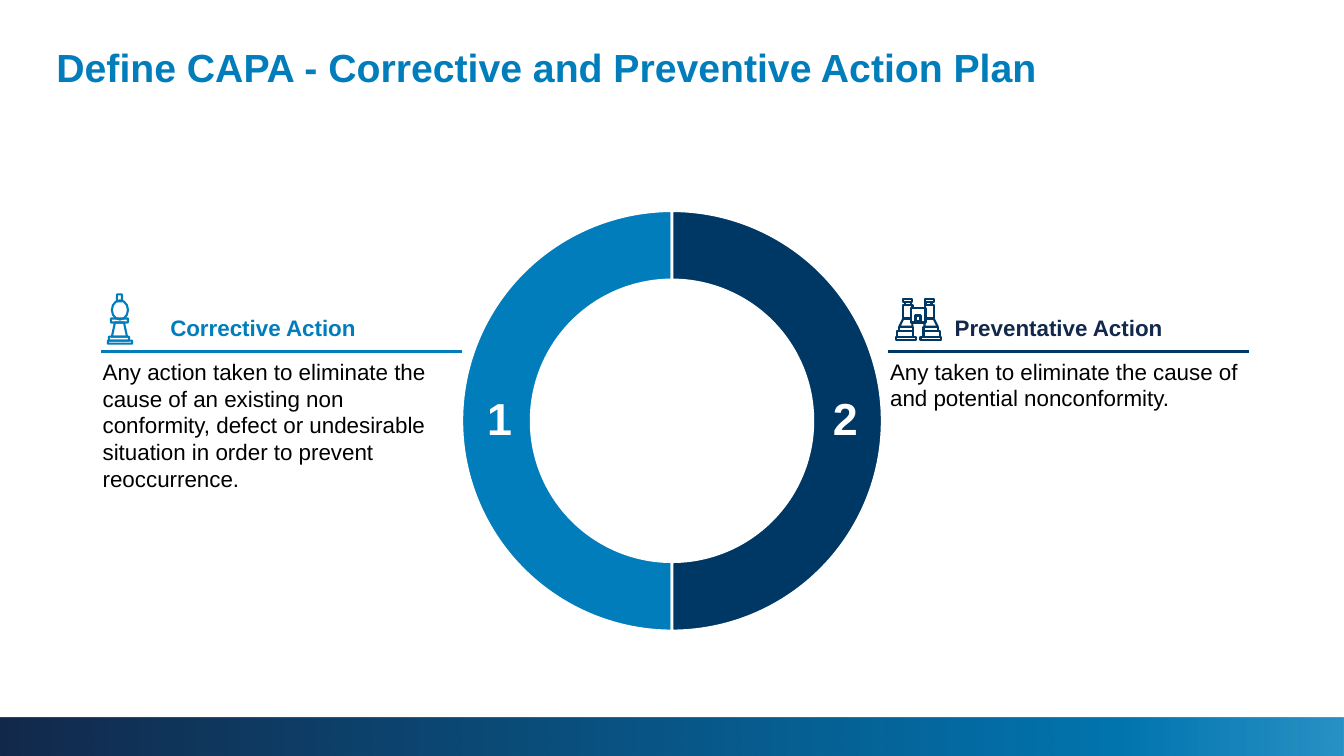
from dataclasses import dataclass

from lxml import etree
from pptx import Presentation, util as u
from pptx.dml.color import RGBColor
from pptx.enum import shapes, text
from pptx.oxml import parse_xml
from pptx.oxml.ns import nsdecls, qn

COLORS = {"blue": "007DBA", "mid": "0275AF", "navy": "003865",
          "ink": "13294B", "white": "FFFFFF", "black": "000000"}
KIND = shapes.MSO_SHAPE
Box = tuple[float, float, float, float]
Points = list[tuple[float, float]]


@dataclass
class Action:
    number: str
    heading: str
    body: str
    color: str
    heading_color: str
    left: float
    heading_left: float
    body_height: float
    number_left: float
    rule: tuple[float, float]
    arc: tuple[float, float]


ACTIONS = [
    Action("1", "Corrective Action",
           "Any action taken to eliminate the cause of an existing non conformity, "
           "defect or undesirable situation in order to prevent reoccurrence.",
           "blue", "blue", 0.92, 1.59, 1.45, 4.83, (4.58, 1), (0, 108)),
    Action("2", "Preventative Action",
           "Any taken to eliminate the cause of and potential nonconformity.",
           "navy", "ink", 8.73, 9.37, 0.64, 8.26, (12.39, 8.81), (108, 0)),
]

BISHOP_OVAL: Box = (1.11, 2.98, 0.16, 0.19)
BISHOP_BARS: list[Box] = [(1.07, 3.38, 0.24, 0.03), (1.08, 3.34, 0.2, 0.04),
                          (1.1, 3.16, 0.17, 0.04), (1.16, 2.92, 0.05, 0.07)]
BISHOP_BODY: Points = [(1.26, 3.34), (1.11, 3.34), (1.14, 3.2), (1.23, 3.2)]

BINOCULAR_AXIS = 9.11
BARREL_BARS: list[Box] = [(8.9, 3.28, 0.16, 0.06), (8.92, 3.24, 0.14, 0.04),
                          (8.98, 3, 0.06, 0.03), (8.96, 2.97, 0.09, 0.03),
                          (8.89, 3.34, 0.2, 0.03)]
BARREL_OUTLINES: list[Points] = [
    [(9.05, 3.19), (9.05, 3.24), (8.92, 3.24), (8.96, 3.16), (9.04, 3.16)],
    [(9.04, 3.16), (8.96, 3.16), (8.96, 3.03), (9.05, 3.03), (9.05, 3.06)],
]
BRIDGE_BARS: list[Box] = [(9.04, 3.06, 0.14, 0.14), (9.08, 3.13, 0.05, 0.06)]


def rgb(name: str) -> RGBColor:
    return RGBColor.from_string(COLORS[name])


def inches(values) -> list[int]:
    return [u.Inches(value) for value in values]


def write_text(shape, wording: str, *, size: float, color: str, bold=False, wrap=True,
               align=text.PP_ALIGN.LEFT, anchor=text.MSO_ANCHOR.TOP,
               inset: float | None = None, spacing: float | None = None,
               fit=text.MSO_AUTO_SIZE.SHAPE_TO_FIT_TEXT) -> None:
    frame = shape.text_frame
    frame.word_wrap = wrap
    frame.auto_size = fit
    frame.vertical_anchor = anchor
    if inset is not None:
        frame.margin_left = frame.margin_right = u.Inches(inset)
        frame.margin_top = frame.margin_bottom = u.Inches(inset)
    paragraph = frame.paragraphs[0]
    paragraph.alignment = align
    if spacing:
        paragraph.line_spacing = spacing
    run = paragraph.add_run()
    run.text = wording
    run.font.name = "Arial"
    run.font.size = u.Pt(size)
    run.font.bold = bold
    run.font.color.rgb = rgb(color)


def style_line(shape, color: str, width: float) -> None:
    shape.line.color.rgb = rgb(color)
    shape.line.width = u.Pt(width)


def add_stroke(parent, kind, box: Box, color: str) -> None:
    """Draw an unfilled preset shape of an icon."""
    shape = parent.shapes.add_shape(kind, *inches(box))
    shape.shadow.inherit = False
    shape.fill.background()
    style_line(shape, color, 1.5)


def add_outline(parent, points: Points, color: str, close: bool) -> None:
    start, *rest = [inches(point) for point in points]
    builder = parent.shapes.build_freeform(*start)
    builder.add_line_segments(rest, close=close)
    shape = builder.convert_to_shape()
    shape.shadow.inherit = False
    shape.fill.background()
    style_line(shape, color, 1.5)


def add_bishop(slide, color: str) -> None:
    group = slide.shapes.add_group_shape()
    add_stroke(group, KIND.OVAL, BISHOP_OVAL, color)
    for box in BISHOP_BARS:
        add_stroke(group, KIND.ROUNDED_RECTANGLE, box, color)
    add_outline(group, BISHOP_BODY, color, close=True)


def add_binoculars(slide, color: str) -> None:
    group = slide.shapes.add_group_shape()
    for left, top, width, height in BARREL_BARS:
        mirrored = 2 * BINOCULAR_AXIS - left - width
        for x in (left, mirrored):
            add_stroke(group, KIND.RECTANGLE, (x, top, width, height), color)
    for points in BARREL_OUTLINES:
        add_outline(group, points, color, close=False)
        mirrored_points = [(2 * BINOCULAR_AXIS - x, y) for x, y in points]
        add_outline(group, mirrored_points, color, close=False)
    for box in BRIDGE_BARS:
        add_stroke(group, KIND.RECTANGLE, box, color)


def add_footer_band(slide) -> None:
    band = slide.shapes.add_shape(KIND.RECTANGLE, *inches((0, 7.12, 13.33, 0.38)))
    band.shadow.inherit = False
    band.line.fill.background()
    band.fill.gradient()
    band.fill.gradient_angle = 0
    stop_list = band.fill._xPr.find(qn("a:gradFill")).find(qn("a:gsLst"))
    for stop in list(stop_list):
        stop_list.remove(stop)
    for position, color, opacity in ((0, "ink", 100), (83, "mid", 100), (100, "blue", 84)):
        stop_list.append(parse_xml(
            f'<a:gs {nsdecls("a")} pos="{position * 1000}"><a:srgbClr val="{COLORS[color]}">'
            f'<a:alpha val="{opacity * 1000}"/></a:srgbClr></a:gs>'))


def add_ring(slide) -> None:
    group = slide.shapes.add_group_shape()
    for action in ACTIONS:
        half = group.shapes.add_shape(KIND.BLOCK_ARC, *inches((4.58, 2.09, 4.17, 4.17)))
        half.shadow.inherit = False
        half.rotation = 90
        for index, value in enumerate((*action.arc, 0.165)):
            half.adjustments[index] = value
        half.fill.solid()
        half.fill.fore_color.rgb = rgb(action.color)
        style_line(half, "white", 2)


def add_action(slide, action: Action) -> None:
    def add_box(*box: float):
        return slide.shapes.add_textbox(*inches(box))

    write_text(add_box(action.number_left, 3.88, 0.25, 0.54), action.number, size=32,
               color="white", bold=True, wrap=False, align=text.PP_ALIGN.CENTER, inset=0)
    write_text(add_box(action.left, 3.5, 3.66, action.body_height), action.body,
               size=16, color="black")
    start, end = action.rule
    rule = slide.shapes.add_connector(shapes.MSO_CONNECTOR.STRAIGHT,
                                      *inches((start, 3.49, end, 3.49)))
    style_line(rule, action.color, 2.25)
    etree.SubElement(rule._element.spPr, qn("a:effectLst"))
    write_text(add_box(action.heading_left, 3.06, 3.01, 0.37), action.heading, size=16,
               color=action.heading_color, bold=True, anchor=text.MSO_ANCHOR.MIDDLE)


def main() -> None:
    presentation = Presentation()
    presentation.slide_width, presentation.slide_height = inches((13.33, 7.5))
    slide = presentation.slides.add_slide(presentation.slide_layouts[5])
    title = slide.shapes.title
    title.left, title.top, title.width, title.height = inches((0.46, 0.42, 12.42, 0.54))
    write_text(title, "Define CAPA - Corrective and Preventive Action Plan", size=28,
               color="blue", bold=True, anchor=text.MSO_ANCHOR.MIDDLE, spacing=0.9,
               fit=text.MSO_AUTO_SIZE.NONE)
    add_footer_band(slide)
    add_ring(slide)
    for action in ACTIONS:
        add_action(slide, action)
    add_bishop(slide, "blue")
    add_binoculars(slide, "navy")
    presentation.save("out.pptx")


if __name__ == "__main__":
    main()
